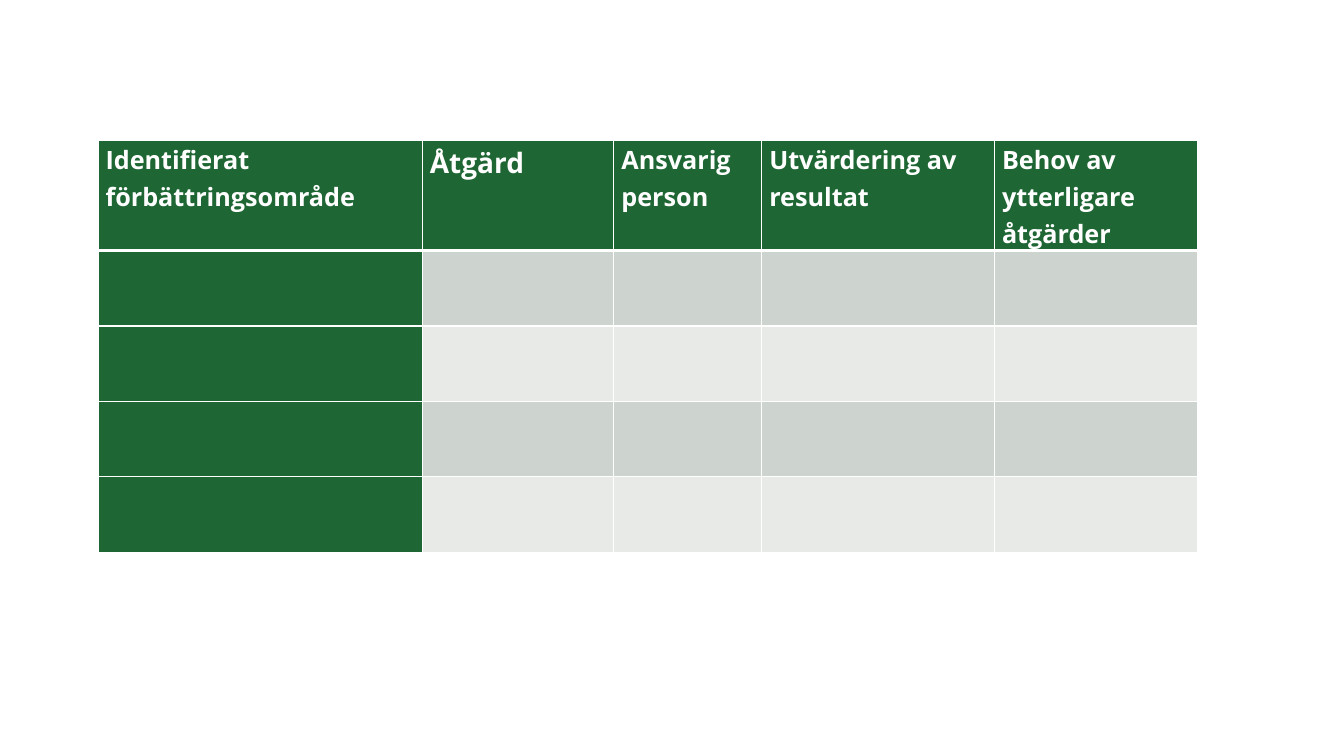
from lxml import etree
from pptx import Presentation
from pptx.dml.color import RGBColor
from pptx.oxml.ns import qn
from pptx.util import Cm, Pt

COLORS = {"green": "1E6633", "sage": "CDD3CE", "mist": "E8EAE8", "white": "FFFFFF"}
FONT = "Open Sans"
BLANK_LAYOUT = 6
HEADINGS = [
    ("Identifierat förbättringsområde", 8.18, 18),
    ("Åtgärd", 4.83, 20),
    ("Ansvarig person", 3.73, 18),
    ("Utvärdering av resultat", 5.87, 18),
    ("Behov av ytterligare åtgärder", 5.11, 18),
]
ACTION_ROWS = 4
HEADER_HEIGHT = 2.26


def write_text(frame, text, size=18, color="white", bold=False, spacing=1.07):
    paragraph = frame.paragraphs[0]
    paragraph.line_spacing = spacing
    run = paragraph.add_run()
    run.text = text
    run.font.name = FONT
    run.font.size = Pt(size)
    run.font.bold = bold
    run.font.color.rgb = RGBColor.from_string(COLORS[color])


def set_borders(cell, color="white", **widths):
    properties = cell._tc.get_or_add_tcPr()
    for position, side in enumerate("LRTB"):
        border = etree.Element(qn(f"a:ln{side}"), w=str(Pt(widths.get(side, 1))))
        fill = etree.SubElement(border, qn("a:solidFill"))
        etree.SubElement(fill, qn("a:srgbClr"), val=COLORS[color])
        properties.insert(position, border)


def format_cell(cell, color, **border_widths):
    cell.fill.solid()
    cell.fill.fore_color.rgb = RGBColor.from_string(COLORS[color])
    cell.margin_left = cell.margin_right = Cm(0.19)
    cell.margin_top = cell.margin_bottom = 0
    set_borders(cell, **border_widths)


def add_action_plan(slide, left, top, width, height):
    plan = slide.shapes.add_table(
        ACTION_ROWS + 1, len(HEADINGS), Cm(left), Cm(top), Cm(width), Cm(height)
    ).table
    plan.first_col = True
    total_width = sum(share for _, share, _ in HEADINGS)
    action_height = (height - HEADER_HEIGHT) / ACTION_ROWS

    for column, (heading, share, size) in enumerate(HEADINGS):
        plan.columns[column].width = Cm(width * share / total_width)
        header = plan.cell(0, column)
        format_cell(header, "green", B=3)
        write_text(header.text_frame, heading, size=size, bold=True)

    plan.rows[0].height = Cm(HEADER_HEIGHT)
    for row in range(1, ACTION_ROWS + 1):
        plan.rows[row].height = Cm(action_height)
        band = "sage" if row % 2 else "mist"
        for column in range(len(HEADINGS)):
            color = band if column else "green"
            format_cell(plan.cell(row, column), color, T=3 if row == 1 else 1)


def main():
    presentation = Presentation()
    presentation.slide_width = Cm(33.87)
    presentation.slide_height = Cm(19.05)
    slide = presentation.slides.add_slide(presentation.slide_layouts[BLANK_LAYOUT])
    add_action_plan(slide, left=2.47, top=3.54, width=27.7, height=9.86)
    presentation.save("out.pptx")


if __name__ == "__main__":
    main()
